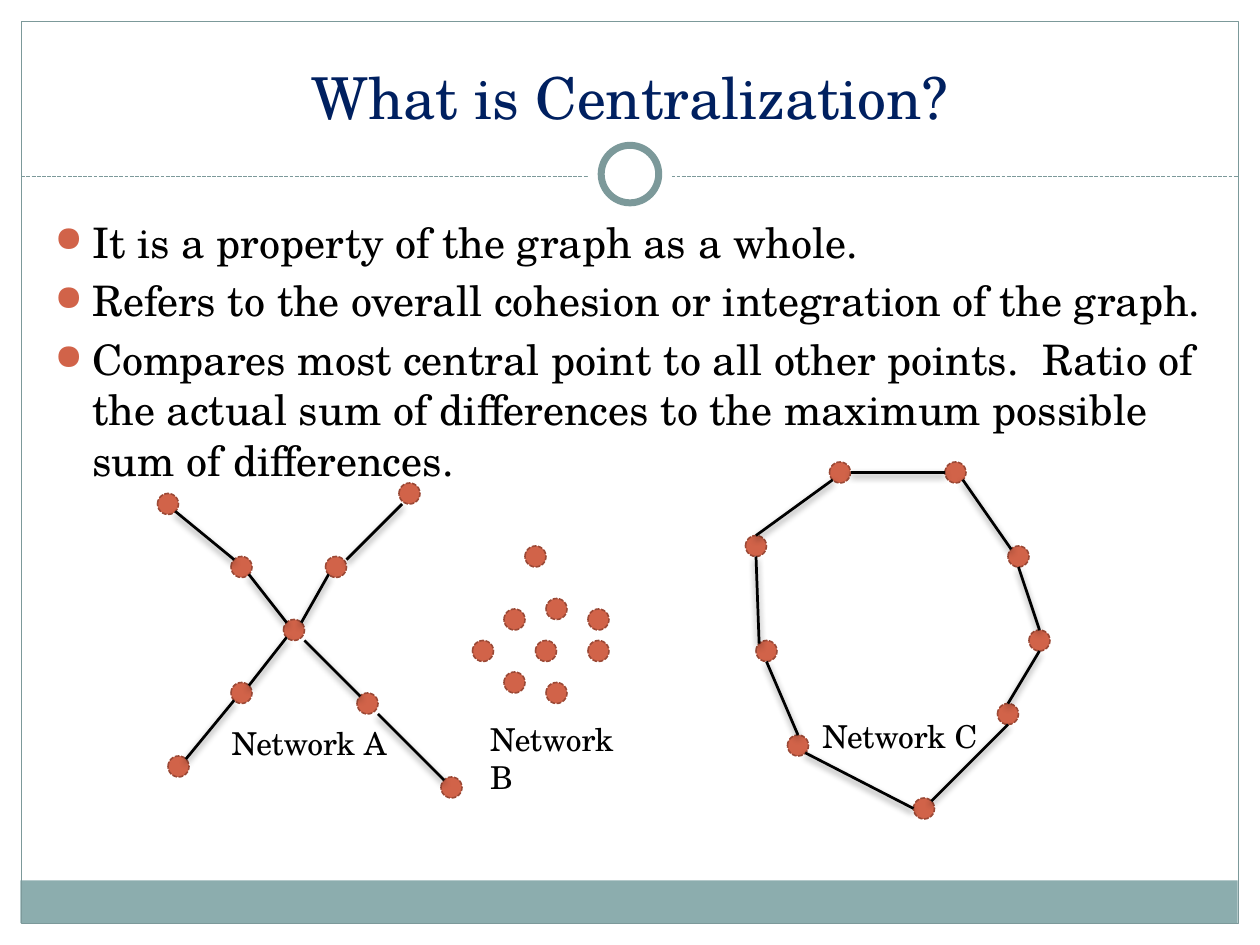
from dataclasses import dataclass

from lxml.etree import SubElement
from pptx import Presentation
from pptx.dml.color import RGBColor
from pptx.enum.dml import MSO_LINE
from pptx.enum.shapes import MSO_CONNECTOR, MSO_SHAPE
from pptx.enum.text import MSO_ANCHOR, PP_ALIGN
from pptx.oxml.ns import qn
from pptx.util import Cm, Pt


@dataclass(frozen=True)
class Theme:
    """Colours, font and type sizes of the slide."""
    font: str = "TeX Gyre Schola"
    title: str = "002060"
    ink: str = "000000"
    paper: str = "FFFFFF"
    band: str = "8CADAE"
    trim: str = "7C999A"
    node: str = "D16349"
    node_edge: str = "9B4936"
    title_size: float = 33
    body_size: float = 24
    label_size: float = 18


THEME = Theme()
GRID = 2.54 / 12
RADIUS = GRID
D = 0.7

BULLETS = [
    "It is a property of the graph as a whole.",
    "Refers to the overall cohesion or integration of the graph.",
    "Compares most central point to all other points.  Ratio of the actual "
    "sum of differences to the maximum possible sum of differences.",
]

N, S, E, W = (0, -1), (0, 1), (1, 0), (-1, 0)
NE, NW, SE, SW = (D, -D), (-D, -D), (D, D), (-D, D)
CORNER = (1, 1)

NODES_A = {
    "hub": (28, 60), "ne": (32, 54), "nw": (23, 54), "sw": (23, 66),
    "se": (35, 67), "far_ne": (39, 47), "far_nw": (16, 48),
    "far_sw": (17, 73), "far_se": (43, 75),
}
EDGES_A = [
    ("far_nw", SE, "nw", NW), ("far_ne", (-D, 1), "ne", (1, -D)),
    ("nw", SE, "hub", NW), ("ne", SW, "hub", NE),
    ("hub", CORNER, "se", NW), ("hub", SW, "sw", NE),
    ("se", CORNER, "far_se", NW), ("sw", SW, "far_sw", NE),
]
NODES_B = dict(enumerate([
    (49, 65), (53, 58), (46, 62), (57, 59), (49, 59),
    (52, 62), (53, 66), (57, 62), (51, 53),
]))
NODES_C = dict(enumerate([
    (80, 45), (91, 45), (97, 53), (99, 61), (96, 68),
    (88, 77), (76, 71), (73, 62), (72, 52),
]))
EDGES_C = [
    (0, E, 1, W), (8, N, 0, SW), (8, S, 7, NW), (7, S, 6, N), (6, SE, 5, W),
    (1, SE, 2, NW), (2, S, 3, N), (3, S, 4, N), (4, S, 5, NE),
]


def rgb(value):
    """Return the colour object for a hex string."""
    return RGBColor.from_string(value)


def style_line(line, color, width, dash=None):
    """Set colour, width and dash of a line."""
    line.color.rgb = rgb(color)
    line.width = Pt(width)
    if dash:
        line.dash_style = dash


def add_figure(s, kind, box, fill=None, line=None):
    """Add a preset shape with an optional fill and line."""
    sp = s.shapes.add_shape(kind, *map(Cm, box))
    sp.shadow.inherit = False
    if fill:
        sp.fill.solid()
        sp.fill.fore_color.rgb = rgb(fill)
    else:
        sp.fill.background()
    if line:
        style_line(sp.line, *line)
    else:
        sp.line.fill.background()


def add_circle(s, x, y, radius, fill, line=None):
    """Add a circle around a centre point."""
    box = (x - radius, y - radius, 2 * radius, 2 * radius)
    add_figure(s, MSO_SHAPE.OVAL, box, fill, line)


def add_line(s, start, end, *style, shadow=False):
    """Add a straight line, with a soft shadow below it if asked."""
    cx = s.shapes.add_connector(MSO_CONNECTOR.STRAIGHT, *map(Cm, (*start, *end)))
    style_line(cx.line, *style)
    effects = SubElement(cx._element.spPr, qn("a:effectLst"))
    if shadow:
        outer = SubElement(effects, qn("a:outerShdw"), blurRad=str(Pt(4)),
                           dist=str(Pt(2)), dir="5400000", rotWithShape="0")
        color = SubElement(outer, qn("a:srgbClr"), val=THEME.ink)
        SubElement(color, qn("a:alpha"), val="45000")


def add_bullet(p):
    """Give a paragraph a hanging round bullet."""
    pPr = p._p.get_or_add_pPr()
    pPr.set("marL", str(Cm(0.76)))
    pPr.set("indent", str(-Cm(0.76)))
    color = SubElement(pPr, qn("a:buClr"))
    SubElement(color, qn("a:srgbClr"), val=THEME.node)
    SubElement(pPr, qn("a:buSzPct"), val="85000")
    SubElement(pPr, qn("a:buChar"), char="●")


def add_text(s, box, lines, size, color=THEME.ink, align=PP_ALIGN.LEFT,
             anchor=MSO_ANCHOR.TOP, bullets=False):
    """Add a wrapping text box with one paragraph per line."""
    tf = s.shapes.add_textbox(*map(Cm, box)).text_frame
    tf.word_wrap = True
    tf.vertical_anchor = anchor
    tf.text = "\n".join(lines)
    for p in tf.paragraphs:
        p.alignment = align
        if bullets:
            p.space_before = Pt(size * 0.2)
            add_bullet(p)
        for r in p.runs:
            r.font.name = THEME.font
            r.font.size = Pt(size)
            r.font.color.rgb = rgb(color)


def add_frame(s):
    """Add the bottom band, border, dashed rule and ring."""
    add_figure(s, MSO_SHAPE.RECTANGLE, (0.41, 17.75, 24.54, 0.86), THEME.band)
    add_figure(s, MSO_SHAPE.RECTANGLE, (0.43, 0.43, 24.54, 18.19),
               line=(THEME.trim, 0.75))
    add_line(s, (0.43, 3.56), (24.97, 3.56), THEME.trim, 0.75,
             MSO_LINE.SQUARE_DOT)
    add_circle(s, 12.7, 3.51, 0.85, THEME.paper)
    add_circle(s, 12.7, 3.51, 0.58, THEME.paper, (THEME.trim, 4))


def add_network(s, nodes, edges, label, box):
    """Add the nodes, edges and label of one network."""
    centres = {k: (x * GRID, y * GRID) for k, (x, y) in nodes.items()}
    for x, y in centres.values():
        add_circle(s, x, y, RADIUS, THEME.node,
                   (THEME.node_edge, 0.9, MSO_LINE.SQUARE_DOT))
    for a, side_a, b, side_b in edges:
        start, end = ([c + RADIUS * d for c, d in zip(centres[k], side)]
                      for k, side in ((a, side_a), (b, side_b)))
        add_line(s, start, end, THEME.ink, 1.57, shadow=True)
    add_text(s, box, [label], THEME.label_size)


def main():
    """Build the slide and save it."""
    prs = Presentation()
    prs.slide_width, prs.slide_height = Cm(25.4), Cm(19.05)
    s = prs.slides.add_slide(prs.slide_layouts[6])
    add_frame(s)
    add_text(s, (0.85, 0.64, 23.7, 2.12), ["What is Centralization?"],
             THEME.title_size, THEME.title, PP_ALIGN.CENTER, MSO_ANCHOR.BOTTOM)
    add_text(s, (0.85, 4.23, 23.62, 12.7), BULLETS, THEME.body_size,
             bullets=True)
    add_network(s, NODES_A, EDGES_A, "Network A", (4.42, 14.48, 4.45, 1.02))
    add_network(s, NODES_C, EDGES_C, "Network C", (16.33, 14.33, 3.86, 1.02))
    add_network(s, NODES_B, [], "Network B", (9.63, 14.4, 3.6, 1.02))
    prs.save("out.pptx")


if __name__ == "__main__":
    main()
